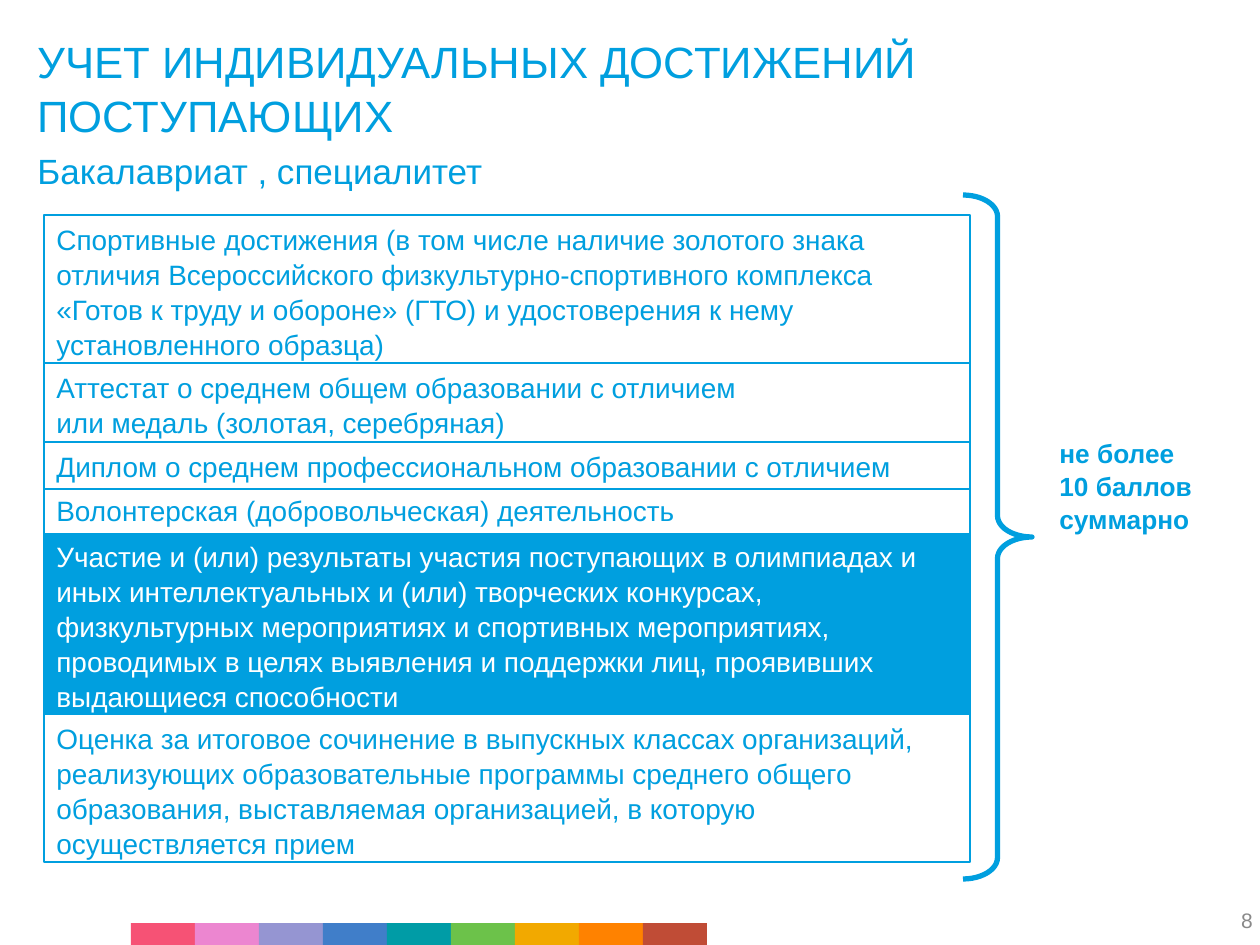
from dataclasses import dataclass

from pptx import Presentation
from pptx.dml.color import RGBColor
from pptx.enum.shapes import MSO_SHAPE
from pptx.enum.text import MSO_ANCHOR, PP_ALIGN
from pptx.util import Emu, Pt

RECTANGLE, BRACE = MSO_SHAPE.RECTANGLE, MSO_SHAPE.RIGHT_BRACE
TOP, MIDDLE = MSO_ANCHOR.TOP, MSO_ANCHOR.MIDDLE
LEFT, RIGHT = PP_ALIGN.LEFT, PP_ALIGN.RIGHT

PX_PER_INCH = 126
BLUE, WHITE, GREY = "009FDF", "FFFFFF", "898989"
STRIPE_COLORS = ["F65275", "EC86D0", "9595D2", "407EC9", "009CA6",
                 "6CC24A", "F2A900", "FF8200", "C04C36"]
STRIPE_LEFT, STRIPE_TOP, STRIPE_WIDTH, STRIPE_HEIGHT = 131, 923, 64, 22
ROW_LEFT, ROW_WIDTH = 44, 926


@dataclass
class Line:
    text: str
    size: int
    color: str = BLUE
    bold: bool = False
    align: PP_ALIGN = LEFT


@dataclass
class Achievement:
    top: int
    height: int
    paragraphs: list[str]
    fill: str = WHITE
    color: str = BLUE


ACHIEVEMENTS = [
    Achievement(215, 148, [
        "Спортивные достижения (в том числе наличие золотого знака отличия "
        "Всероссийского физкультурно-спортивного комплекса «Готов к труду и "
        "обороне» (ГТО) и удостоверения к нему установленного образца)"]),
    Achievement(363, 79, ["Аттестат о среднем общем образовании с отличием",
                          "или медаль (золотая, серебряная)"]),
    Achievement(442, 47, [
        "Диплом о среднем профессиональном образовании с отличием"]),
    Achievement(486, 48, ["Волонтерская (добровольческая) деятельность"]),
    Achievement(532, 182, [
        "Участие и (или) результаты участия поступающих в олимпиадах и иных "
        "интеллектуальных и (или) творческих конкурсах, физкультурных "
        "мероприятиях и спортивных мероприятиях, проводимых в целях выявления "
        "и поддержки лиц, проявивших выдающиеся способности"], BLUE, WHITE),
    Achievement(714, 148, [
        "Оценка за итоговое сочинение в выпускных классах организаций, "
        "реализующих образовательные программы среднего общего образования, "
        "выставляемая организацией, в которую осуществляется прием"]),
]


def px(length: int) -> Emu:
    return Emu(round(length * 914400 / PX_PER_INCH))


def rgb(color: str) -> RGBColor:
    return RGBColor.from_string(color)


def write(frame, lines: list[Line], anchor=TOP) -> None:
    frame.word_wrap = True
    frame.vertical_anchor = anchor
    for index, line in enumerate(lines):
        paragraph = frame.paragraphs[0] if index == 0 else frame.add_paragraph()
        paragraph.text = line.text
        paragraph.alignment = line.align
        paragraph.line_spacing = 1.04
        font = paragraph.font
        font.name, font.size, font.bold = "Arial", Pt(line.size), line.bold
        font.color.rgb = rgb(line.color)


def add_text(slide, left: int, top: int, width: int, height: int,
             lines: list[Line], anchor=TOP):
    box = slide.shapes.add_textbox(px(left), px(top), px(width), px(height))
    write(box.text_frame, lines, anchor)
    return box


def add_figure(slide, kind, left: int, top: int, width: int, height: int,
               fill: str | None = None, line: str | None = None,
               weight: float = 0.75):
    figure = slide.shapes.add_shape(kind, px(left), px(top), px(width), px(height))
    figure.shadow.inherit = False
    if fill:
        figure.fill.solid()
        figure.fill.fore_color.rgb = rgb(fill)
    else:
        figure.fill.background()
    if line:
        figure.line.color.rgb = rgb(line)
        figure.line.width = Pt(weight)
    else:
        figure.line.fill.background()
    return figure


def add_achievement(slide, item: Achievement) -> None:
    row = add_figure(slide, RECTANGLE, ROW_LEFT, item.top, ROW_WIDTH,
                     item.height, item.fill, BLUE)
    write(row.text_frame, [Line(text, 16, item.color) for text in item.paragraphs])


def main() -> None:
    prs = Presentation()
    prs.slide_width, prs.slide_height = px(1260), px(945)
    slide = prs.slides.add_slide(prs.slide_layouts[6])

    # Coloured stripe and page number
    for index, color in enumerate(STRIPE_COLORS):
        add_figure(slide, RECTANGLE, STRIPE_LEFT + index * STRIPE_WIDTH,
                   STRIPE_TOP, STRIPE_WIDTH, STRIPE_HEIGHT, color)
    add_text(slide, 971, 895, 294, 50, [Line("8", 12, GREY, align=RIGHT)], MIDDLE)

    # Heading
    heading = add_text(slide, 25, 26, 1230, 170, [
        Line("УЧЕТ ИНДИВИДУАЛЬНЫХ ДОСТИЖЕНИЙ ПОСТУПАЮЩИХ", 25),
        Line("Бакалавриат , специалитет", 20)])
    heading.text_frame.paragraphs[1].space_before = Pt(4)

    # Achievements, the upper rows overlapping the lower ones
    for item in reversed(ACHIEVEMENTS):
        add_achievement(slide, item)

    # Brace with the limit on points
    brace = add_figure(slide, BRACE, 963, 195, 69, 684, line=BLUE, weight=3)
    brace.adjustments[0], brace.adjustments[1] = 0.31, 0.5
    add_text(slide, 1047, 430, 208, 108, [
        Line("не более", 15, bold=True),
        Line("10 баллов суммарно", 15, bold=True)])

    prs.save("out.pptx")


if __name__ == "__main__":
    main()
